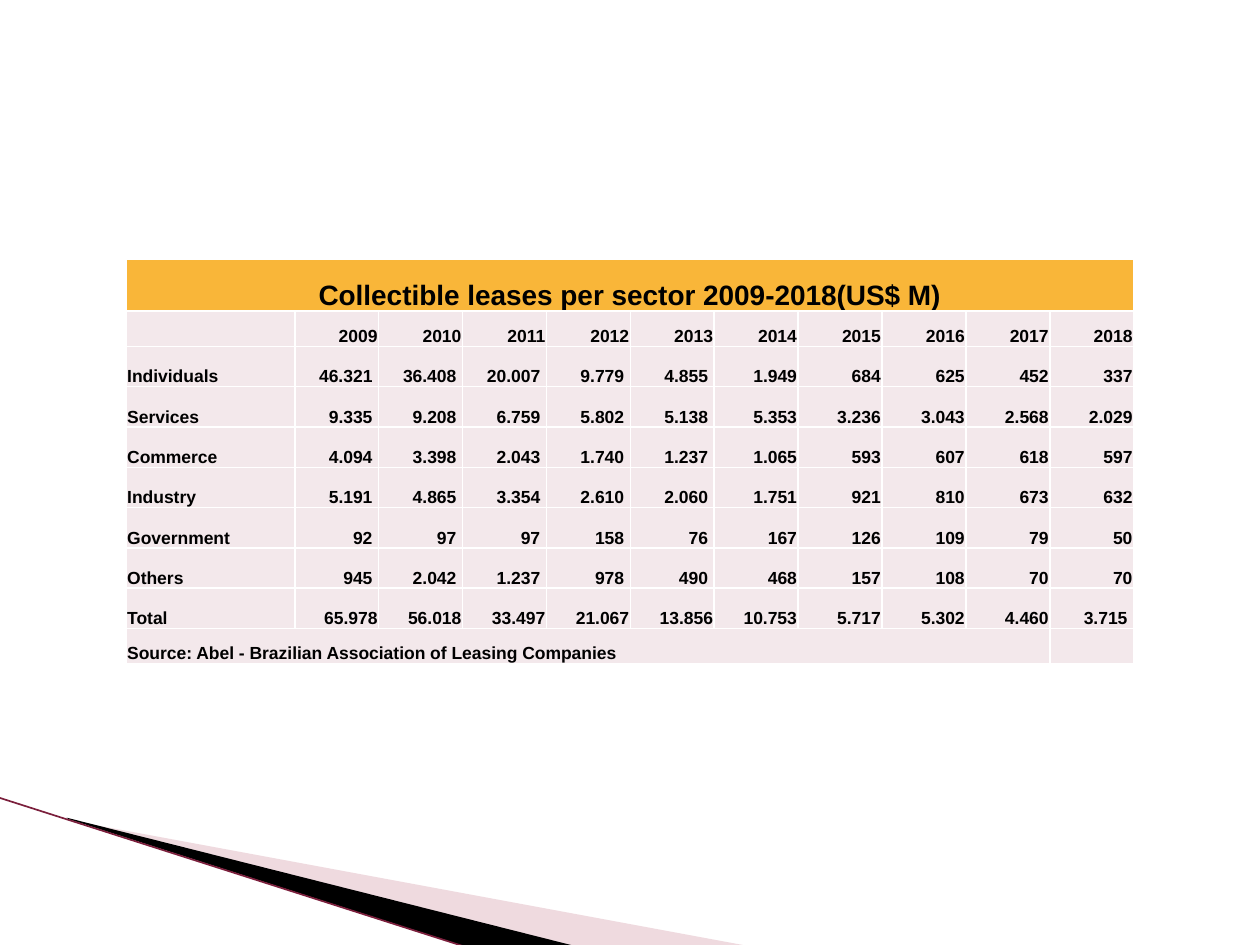
"""Build a slide with a table of collectible leases per sector."""
from lxml import etree
from pptx import Presentation, util as u
from pptx.dml.color import RGBColor
from pptx.enum import shapes, text
from pptx.oxml.ns import qn

TITLE = "Collectible leases per sector 2009-2018(US$ M)"
SOURCE = "Source: Abel - Brazilian Association of Leasing Companies"
YEARS = [str(year) for year in range(2009, 2019)]
SECTORS = [
    ("Individuals", "46.321 36.408 20.007 9.779 4.855 1.949 684 625 452 337"),
    ("Services", "9.335 9.208 6.759 5.802 5.138 5.353 3.236 3.043 2.568 2.029"),
    ("Commerce", "4.094 3.398 2.043 1.740 1.237 1.065 593 607 618 597"),
    ("Industry", "5.191 4.865 3.354 2.610 2.060 1.751 921 810 673 632"),
    ("Government", "92 97 97 158 76 167 126 109 79 50"),
    ("Others", "945 2.042 1.237 978 490 468 157 108 70 70"),
]
TOTAL = ("Total", "65.978 56.018 33.497 21.067 13.856 10.753 5.717 5.302 4.460 3.715")
COLORS = {"title": "F9B639", "cell": "F3E8EB", "text": "000000", "border": "FFFFFF",
          "pink": "D8A3AF", "black": "000000", "edge": "7B1F3C"}
WEDGES = [
    ("pink", 40, [(0.55, 6.51), (5.95, 7.51), (4.56, 7.51), (0.55, 6.5)]),
    ("black", 100, [(0.53, 6.49), (4.57, 7.51), (3.72, 7.52), (0.54, 6.5)]),
]
EDGE = (-0.01, 6.33, 3.71, 7.52)
LEFT, TOP, WIDTH, NAME_WIDTH = 1, 2.06, 8, 1.34
COL_WIDTHS = [NAME_WIDTH] + [(WIDTH - NAME_WIDTH) / len(YEARS)] * len(YEARS)
ROW_HEIGHTS = [0.41, 0.28] + [0.32] * (len(SECTORS) + 1) + [0.28]
INSET, INDENT = 0.01, 0.05
ALIGN = text.PP_ALIGN


def rgb(name):
    return RGBColor.from_string(COLORS[name])


def add_borders(cell):
    tcPr = cell._tc.get_or_add_tcPr()
    for side in ("lnL", "lnR", "lnT", "lnB"):
        ln = etree.SubElement(tcPr, qn(f"a:{side}"), w=str(u.Pt(1)))
        fill = etree.SubElement(ln, qn("a:solidFill"))
        etree.SubElement(fill, qn("a:srgbClr"), val=COLORS["border"])


def write(cell, words, size=10, align=ALIGN.LEFT, fill="cell", right=INSET):
    add_borders(cell)
    cell.fill.solid()
    cell.fill.fore_color.rgb = rgb(fill)
    cell.vertical_anchor = text.MSO_ANCHOR.BOTTOM
    cell.margin_left = cell.margin_top = u.Inches(INSET)
    cell.margin_right, cell.margin_bottom = u.Inches(right), 0
    p = cell.text_frame.paragraphs[0]
    p.alignment = align
    if not words:
        etree.SubElement(p._p, qn("a:endParaRPr"), sz=str(size * 100))
        return
    r = p.add_run()
    r.text = words
    r.font.name, r.font.size, r.font.bold = "Arial", u.Pt(size), True
    r.font.color.rgb = rgb("text")


def add_wedge(s, color, opacity, points):
    corners = [(u.Inches(x), u.Inches(y)) for x, y in points]
    builder = s.shapes.build_freeform(*corners[0])
    builder.add_line_segments(corners[1:], close=True)
    sp = builder.convert_to_shape()
    sp.shadow.inherit = False
    sp.line.fill.background()
    sp.fill.solid()
    sp.fill.fore_color.rgb = rgb(color)
    if opacity < 100:
        clr = sp._element.spPr.find(".//" + qn("a:srgbClr"))
        etree.SubElement(clr, qn("a:alpha"), val=str(opacity * 1000))


def add_edge(s):
    line = s.shapes.add_connector(shapes.MSO_CONNECTOR.STRAIGHT, *map(u.Inches, EDGE))
    line.line.color.rgb = rgb("edge")
    line.line.width = u.Pt(0.95)
    etree.SubElement(line._element.spPr, qn("a:effectLst"))


def add_lease_table(s):
    size = [u.Inches(WIDTH), u.Inches(sum(ROW_HEIGHTS))]
    table = s.shapes.add_table(len(ROW_HEIGHTS), len(COL_WIDTHS),
                               u.Inches(LEFT), u.Inches(TOP), *size).table
    table.first_row = table.horz_banding = False
    for column, width in zip(table.columns, COL_WIDTHS):
        column.width = u.Inches(width)
    for row, height in zip(table.rows, ROW_HEIGHTS):
        row.height = u.Inches(height)

    last_row, last_col = len(ROW_HEIGHTS) - 1, len(YEARS)
    table.cell(0, 0).merge(table.cell(0, last_col))
    table.cell(last_row, 0).merge(table.cell(last_row, last_col - 1))
    write(table.cell(0, 0), TITLE, size=16, align=ALIGN.CENTER, fill="title")
    write(table.cell(last_row, 0), SOURCE)
    write(table.cell(last_row, last_col), "")

    body = [("", YEARS)] + [(name, values.split()) for name, values in SECTORS + [TOTAL]]
    sector_names = [name for name, _ in SECTORS]
    for i, (name, values) in enumerate(body, 1):
        write(table.cell(i, 0), name)
        for j, value in enumerate(values, 1):
            indented = j <= 5 if name in sector_names else name == "Total" and j == last_col
            write(table.cell(i, j), value, align=ALIGN.RIGHT,
                  right=INDENT if indented else INSET)


def main():
    prs = Presentation()
    prs.slide_width, prs.slide_height = u.Inches(10), u.Inches(7.5)
    s = prs.slides.add_slide(prs.slide_layouts[6])
    for wedge in WEDGES:
        add_wedge(s, *wedge)
    add_edge(s)
    add_lease_table(s)
    prs.save("out.pptx")


if __name__ == "__main__":
    main()
